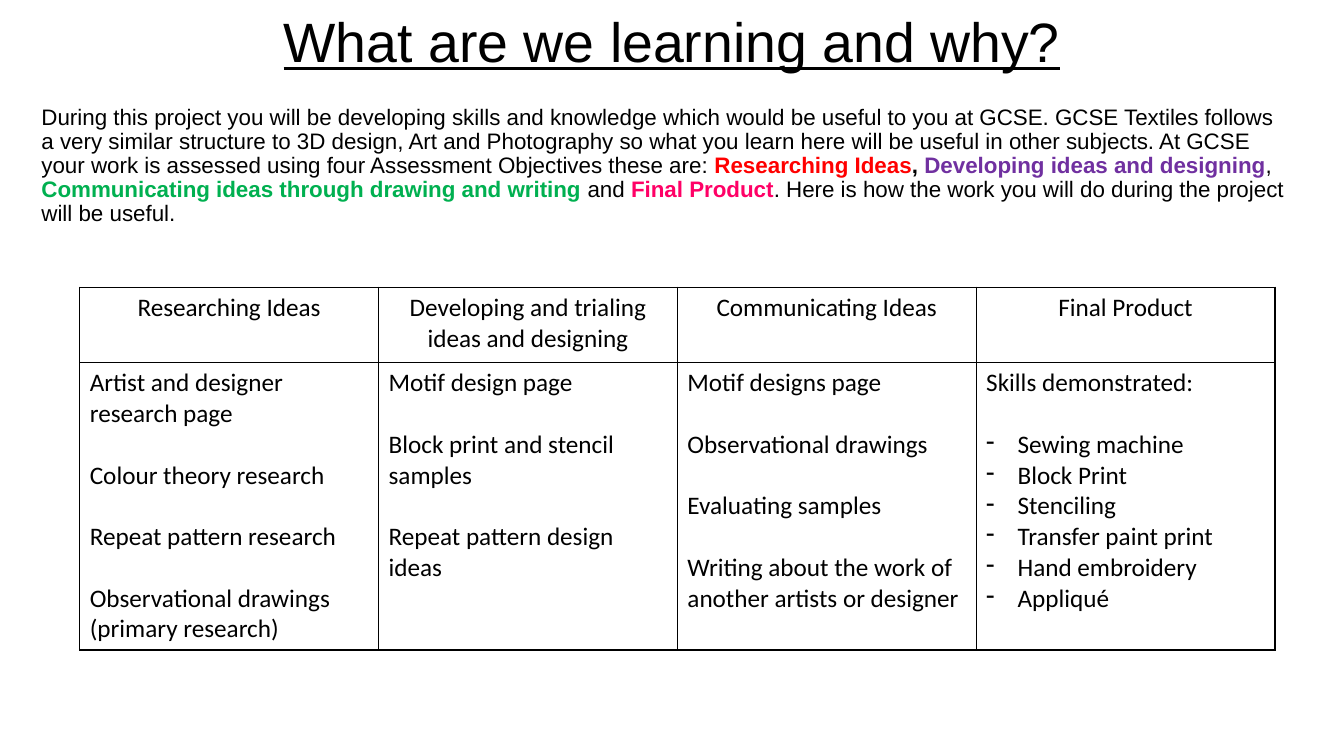
from lxml import etree
from pptx import Presentation
from pptx.dml.color import RGBColor
from pptx.enum import text
from pptx.oxml import ns
from pptx.util import Cm, Pt

COLOURS = {
    "black": "000000",
    "white": "FFFFFF",
    "red": "FF0000",
    "purple": "7030A0",
    "green": "00B050",
    "pink": "FF0066",
}

TITLE_FONT = {"name": "Arial", "size": Pt(39.6), "underline": True, "bold": False}
INTRO_FONT = {"name": "Arial", "size": Pt(16)}
TABLE_FONT = {"name": "Calibri", "size": Pt(18), "bold": False}
LINE_GAP = Pt(22)

# Each run: words, colour, bold
INTRO = [
    ("During this project you will be developing skills and knowledge which would be "
     "useful to you at GCSE. GCSE Textiles follows a very similar structure to 3D design, "
     "Art and Photography so what you learn here will be useful in other subjects. At GCSE "
     "your work is assessed using four Assessment Objectives these are: ", "black", False),
    ("Researching Ideas", "red", True),
    (", ", "black", True),
    ("Developing ideas and designing", "purple", True),
    (", ", "black", False),
    ("Communicating ideas through drawing and writing ", "green", True),
    ("and ", "black", False),
    ("Final Product", "pink", True),
    (". Here is how the work you will do during the project will be useful.", "black", False),
]

# Each column: heading, spaced entries, dashed list
COLUMNS = [
    ("Researching Ideas",
     ["Artist and designer research page", "Colour theory research",
      "Repeat pattern research", "Observational drawings (primary research)"], []),
    ("Developing and trialing ideas and designing",
     ["Motif design page", "Block print and stencil samples",
      "Repeat pattern design ideas"], []),
    ("Communicating Ideas",
     ["Motif designs page", "Observational drawings", "Evaluating samples",
      "Writing about the work of another artists or designer"], []),
    ("Final Product",
     ["Skills demonstrated:"],
     ["Sewing machine", "Block Print", "Stenciling", "Transfer paint print",
      "Hand embroidery", "Appliqué"]),
]


def set_all(target, values):
    for name, value in values.items():
        setattr(target, name, value)


def add_run(paragraph, words, font, colour="black"):
    run = paragraph.add_run()
    run.text = words
    set_all(run.font, font)
    run.font.color.rgb = RGBColor.from_string(COLOURS[colour])


def set_bullet(paragraph, char=None, indent=0):
    properties = paragraph._p.get_or_add_pPr()
    properties.set("marL", str(indent))
    properties.set("indent", str(-indent))
    bullet = etree.SubElement(properties, ns.qn("a:buChar" if char else "a:buNone"))
    if char:
        bullet.set("char", char)


def fill_placeholder(shape, box, anchor, runs, layout):
    set_all(shape, dict(zip(("left", "top", "width", "height"), map(Cm, box))))
    frame = shape.text_frame
    set_all(frame, {"word_wrap": True, "auto_size": text.MSO_AUTO_SIZE.NONE,
                    "vertical_anchor": anchor})
    paragraph = frame.paragraphs[0]
    set_all(paragraph, {"line_spacing": 0.9, "space_before": Pt(0), **layout})
    set_bullet(paragraph)
    for words, font, colour in runs:
        add_run(paragraph, words, font, colour)


def style_cell(cell):
    properties = cell._tc.get_or_add_tcPr()
    for side in ("a:lnL", "a:lnR", "a:lnT", "a:lnB"):
        line = etree.SubElement(properties, ns.qn(side), w=str(Pt(1)))
        fill = etree.SubElement(line, ns.qn("a:solidFill"))
        etree.SubElement(fill, ns.qn("a:srgbClr"), val=COLOURS["black"])
    cell.fill.solid()
    cell.fill.fore_color.rgb = RGBColor.from_string(COLOURS["white"])


def fill_body_cell(cell, entries, skills):
    frame = cell.text_frame
    for index, words in enumerate(entries + skills):
        paragraph = frame.add_paragraph() if index else frame.paragraphs[0]
        if 0 < index <= len(entries):
            paragraph.space_before = LINE_GAP
        if index >= len(entries):
            set_bullet(paragraph, "-", Cm(0.79))
        add_run(paragraph, words, TABLE_FONT)


def add_objectives_table(slide):
    width, heights = Cm(7.53), (Cm(1.9), Cm(7.24))
    frame = slide.shapes.add_table(2, len(COLUMNS), Cm(2.01), Cm(7.24),
                                   width * len(COLUMNS), sum(heights))
    table = frame.table
    set_all(table, {"first_row": False, "horz_banding": False})
    for row, height in zip(table.rows, heights):
        row.height = height
    for index, (heading, entries, skills) in enumerate(COLUMNS):
        table.columns[index].width = width
        header, body = table.cell(0, index), table.cell(1, index)
        style_cell(header)
        style_cell(body)
        paragraph = header.text_frame.paragraphs[0]
        paragraph.alignment = text.PP_ALIGN.CENTER
        add_run(paragraph, heading, TABLE_FONT)
        fill_body_cell(body, entries, skills)


def main():
    presentation = Presentation()
    set_all(presentation, {"slide_width": Cm(33.87), "slide_height": Cm(19.05)})
    slide = presentation.slides.add_slide(presentation.slide_layouts[1])

    # Title
    fill_placeholder(slide.shapes.title, (2.33, 0.3, 29.21, 1.63), text.MSO_ANCHOR.MIDDLE,
                     [("What are we learning and why?", TITLE_FONT, "black")],
                     {"alignment": text.PP_ALIGN.CENTER})

    # Introduction
    runs = [(words, {**INTRO_FONT, "bold": bold}, colour) for words, colour, bold in INTRO]
    fill_placeholder(slide.placeholders[1], (0.79, 2.54, 32, 15.21), text.MSO_ANCHOR.TOP,
                     runs, {"alignment": text.PP_ALIGN.LEFT})

    # Assessment objectives
    add_objectives_table(slide)
    presentation.save("out.pptx")


if __name__ == "__main__":
    main()
